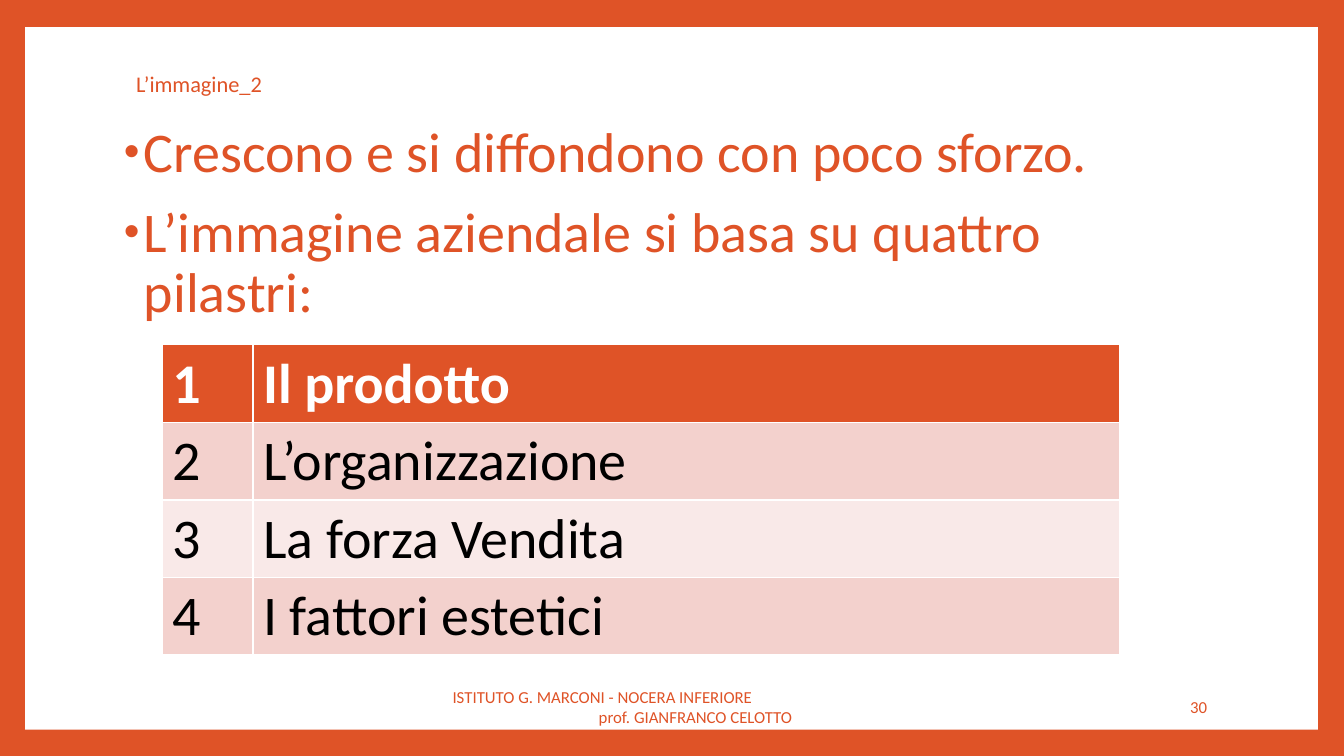
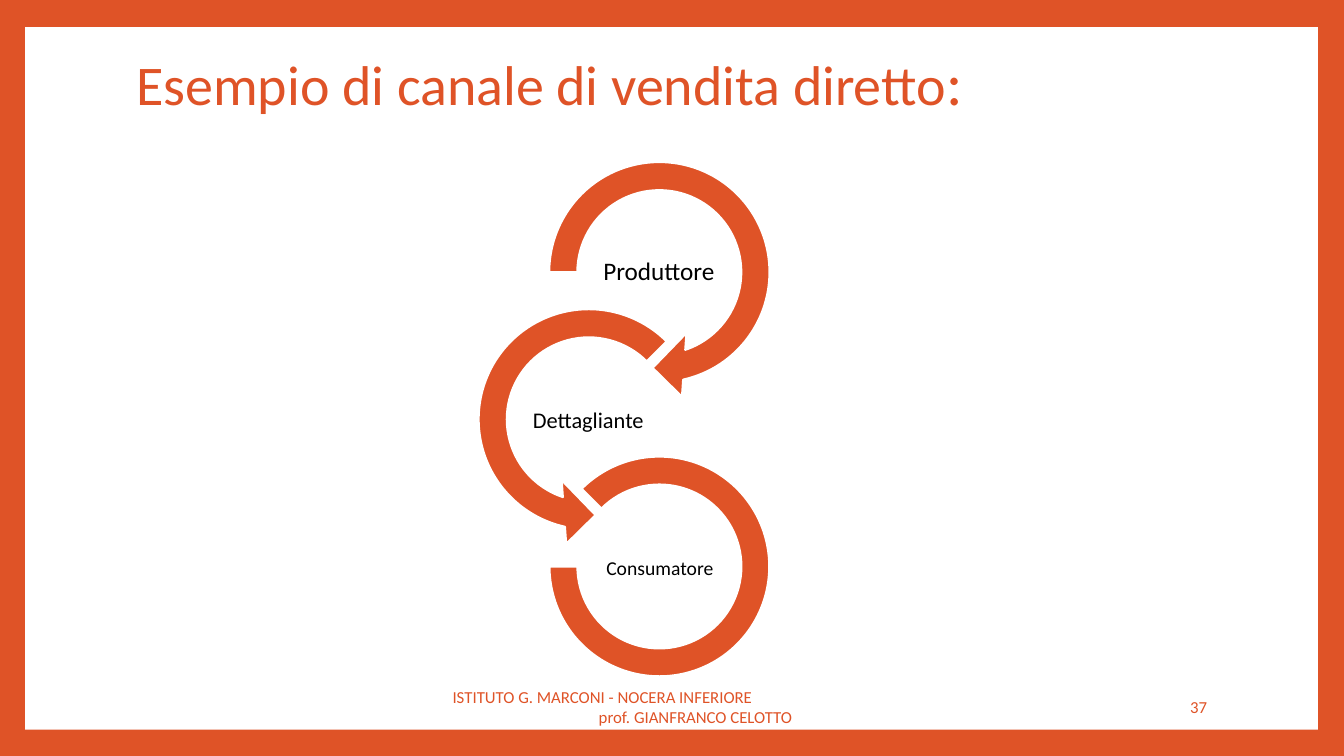
from dataclasses import dataclass
from typing import NamedTuple, Optional

import pptx
import pptx.dml.color
import pptx.enum.shapes
import pptx.enum.text
import pptx.oxml
import pptx.oxml.ns
import pptx.presentation
import pptx.shapes.autoshape
import pptx.slide
import pptx.text.text
import pptx.util

EMU_PER_PX = 9144
ALIGN = pptx.enum.text.PP_ALIGN
ANCHOR = pptx.enum.text.MSO_ANCHOR
SHAPE = pptx.enum.shapes.MSO_SHAPE


@dataclass(frozen=True)
class Theme:
    font: str = "Calibri"
    accent: str = "DF5327"
    paper: str = "FFFFFF"
    ink: str = "000000"
    band_dark: str = "F3D1CD"
    band_light: str = "F9E9E8"
    large: int = 40
    small_title: int = 16
    title_end: int = 44
    footer: int = 12
    line_spacing: float = 0.9
    body_gap: int = 14
    outline: float = 1.5


THEME = Theme()


class Box(NamedTuple):
    left: int
    top: int
    width: int
    height: int

    def emu(self) -> tuple[int, ...]:
        return tuple(px(length) for length in self)


class FooterLine(NamedTuple):
    text: str
    indent: int


class Stage(NamedTuple):
    name: str
    size: int
    label: Box
    preset: pptx.enum.shapes.MSO_SHAPE
    arc: Box
    adjustments: tuple[float, ...]


PANEL = Box(25, 27, 1282, 697)
TITLE = Box(125, 45, 1080, 80)
BODY = Box(108, 118, 1097, 548)
TABLE = Box(161, 342, 949, 308)
FOOTER = Box(432, 681, 516, 40)
PAGE_NUMBER = Box(1020, 681, 187, 40)
NUMBER_COLUMN = 90

FOOTER_LINES = (
    FooterLine("ISTITUTO G. MARCONI - NOCERA INFERIORE", 7),
    FooterLine("prof. GIANFRANCO CELOTTO", 152),
)
POINTS = (
    "Crescono e si diffondono con poco sforzo.",
    "L’immagine aziendale si basa su quattro pilastri:",
)
PILLARS = ("Il prodotto", "L’organizzazione", "La forza Vendita", "I fattori estetici")
STAGES = (
    Stage("Produttore", 18, Box(583, 235, 141, 71), SHAPE.CIRCULAR_ARROW,
          Box(527, 143, 254, 254), (0.11, 11.42, 45, 108, 0.125)),
    Stage("Dettagliante", 16, Box(513, 382, 141, 71), SHAPE.LEFT_CIRCULAR_ARROW,
          Box(457, 289, 254, 254), (0.11, 11.42, 63, 189, 0.125)),
    Stage("Consumatore", 14, Box(584, 529, 141, 71), SHAPE.BLOCK_ARC,
          Box(545, 453, 218, 218), (135, 108, 0.127)),
)


def px(length: int) -> int:
    return length * EMU_PER_PX


def rgb(color: str) -> pptx.dml.color.RGBColor:
    return pptx.dml.color.RGBColor.from_string(color)


def style_runs(paragraph: pptx.text.text._Paragraph, size: int,
               color: str = THEME.accent, bold: bool = False) -> None:
    for run in paragraph.runs:
        run.font.name = THEME.font
        run.font.size = pptx.util.Pt(size)
        run.font.bold = bold
        run.font.color.rgb = rgb(color)


def add_text(slide: pptx.slide.Slide, box: Box, lines: tuple[str, ...], size: int,
             align: ALIGN = ALIGN.LEFT, anchor: ANCHOR = ANCHOR.MIDDLE,
             color: str = THEME.accent) -> pptx.text.text.TextFrame:
    frame = slide.shapes.add_textbox(*box.emu()).text_frame
    frame.word_wrap = True
    frame.vertical_anchor = anchor
    frame.text = "\n".join(lines)
    for paragraph in frame.paragraphs:
        paragraph.alignment = align
        style_runs(paragraph, size, color)
    return frame


def add_filled(slide: pptx.slide.Slide, preset: SHAPE, box: Box,
               color: str) -> pptx.shapes.autoshape.Shape:
    shape = slide.shapes.add_shape(preset, *box.emu())
    shape.shadow.inherit = False
    shape.fill.solid()
    shape.fill.fore_color.rgb = rgb(color)
    shape.line.fill.background()
    return shape


def set_title(slide: pptx.slide.Slide, text: str, size: int, ending: str = "") -> None:
    title = slide.shapes.title
    title.left, title.top, title.width, title.height = TITLE.emu()
    frame = title.text_frame
    frame.text = text
    frame.word_wrap = True
    frame.auto_size = pptx.enum.text.MSO_AUTO_SIZE.NONE
    frame.vertical_anchor = ANCHOR.MIDDLE
    paragraph = frame.paragraphs[0]
    paragraph.alignment = ALIGN.LEFT
    paragraph.line_spacing = THEME.line_spacing
    if ending:
        paragraph.add_run().text = ending
    style_runs(paragraph, size)
    if ending:
        paragraph.runs[-1].font.size = pptx.util.Pt(THEME.title_end)


def add_footer(slide: pptx.slide.Slide, page: int) -> None:
    frame = add_text(slide, FOOTER, tuple(line.text for line in FOOTER_LINES), THEME.footer)
    for paragraph, line in zip(frame.paragraphs, FOOTER_LINES):
        paragraph._p.get_or_add_pPr().set("marL", str(px(line.indent)))
    add_text(slide, PAGE_NUMBER, (str(page),), THEME.footer, ALIGN.RIGHT)


def add_slide(deck: pptx.presentation.Presentation, title: str, size: int,
              page: int, ending: str = "") -> pptx.slide.Slide:
    layout = deck.slide_layouts.get_by_name("Title Only")
    slide = deck.slides.add_slide(layout)
    panel = add_filled(slide, SHAPE.RECTANGLE, PANEL, THEME.paper)
    slide.shapes._spTree.insert(2, panel._element)
    set_title(slide, title, size, ending)
    add_footer(slide, page)
    return slide


def add_bullet(paragraph: pptx.text.text._Paragraph) -> None:
    properties = paragraph._p.get_or_add_pPr()
    properties.set("marL", str(px(25)))
    properties.set("indent", str(px(-20)))
    namespace = pptx.oxml.ns.nsdecls("a")
    for xml in (
        f'<a:buClr {namespace}><a:srgbClr val="{THEME.accent}"/></a:buClr>',
        f'<a:buSzPct {namespace} val="80000"/>',
        f'<a:buFont {namespace} typeface="Arial"/>',
        f'<a:buChar {namespace} char="•"/>',
    ):
        properties.append(pptx.oxml.parse_xml(xml))


def add_points(slide: pptx.slide.Slide) -> None:
    frame = add_text(slide, BODY, POINTS, THEME.large, anchor=ANCHOR.TOP)
    for paragraph in frame.paragraphs:
        paragraph.line_spacing = THEME.line_spacing
        paragraph.space_before = pptx.util.Pt(THEME.body_gap)
        add_bullet(paragraph)


def add_pillars(slide: pptx.slide.Slide) -> None:
    table = slide.shapes.add_table(len(PILLARS), 2, *TABLE.emu()).table
    table.columns[0].width = px(NUMBER_COLUMN)
    table.columns[1].width = px(TABLE.width - NUMBER_COLUMN)
    for row, pillar in enumerate(PILLARS):
        header = row == 0
        band = THEME.band_dark if row % 2 else THEME.band_light
        for column, text in enumerate((str(row + 1), pillar)):
            cell = table.cell(row, column)
            cell.text_frame.text = text
            cell.fill.solid()
            cell.fill.fore_color.rgb = rgb(THEME.accent if header else band)
            style_runs(cell.text_frame.paragraphs[0], THEME.large,
                       THEME.paper if header else THEME.ink, header)


def add_stage(slide: pptx.slide.Slide, stage: Stage) -> None:
    arc = add_filled(slide, stage.preset, stage.arc, THEME.accent)
    arc.line.color.rgb = rgb(THEME.paper)
    arc.line.width = pptx.util.Pt(THEME.outline)
    for index, value in enumerate(stage.adjustments):
        arc.adjustments[index] = value
    frame = add_text(slide, stage.label, (stage.name,), stage.size,
                     ALIGN.CENTER, color=THEME.ink)
    frame.margin_left = frame.margin_right = px(1)
    frame.margin_top = frame.margin_bottom = px(1)
    frame.paragraphs[0].line_spacing = THEME.line_spacing


def main() -> None:
    deck = pptx.Presentation()
    deck.slide_width = pptx.util.Inches(13.33)
    deck.slide_height = pptx.util.Inches(7.5)
    background = deck.slide_master.background.fill
    background.solid()
    background.fore_color.rgb = rgb(THEME.accent)

    image_slide = add_slide(deck, "L’immagine_2", THEME.small_title, 30)
    add_points(image_slide)
    add_pillars(image_slide)

    channel_slide = add_slide(deck, "Esempio di canale di vendita diretto",
                              THEME.large, 37, ":")
    for stage in STAGES:
        add_stage(channel_slide, stage)

    deck.save("out.pptx")


if __name__ == "__main__":
    main()
